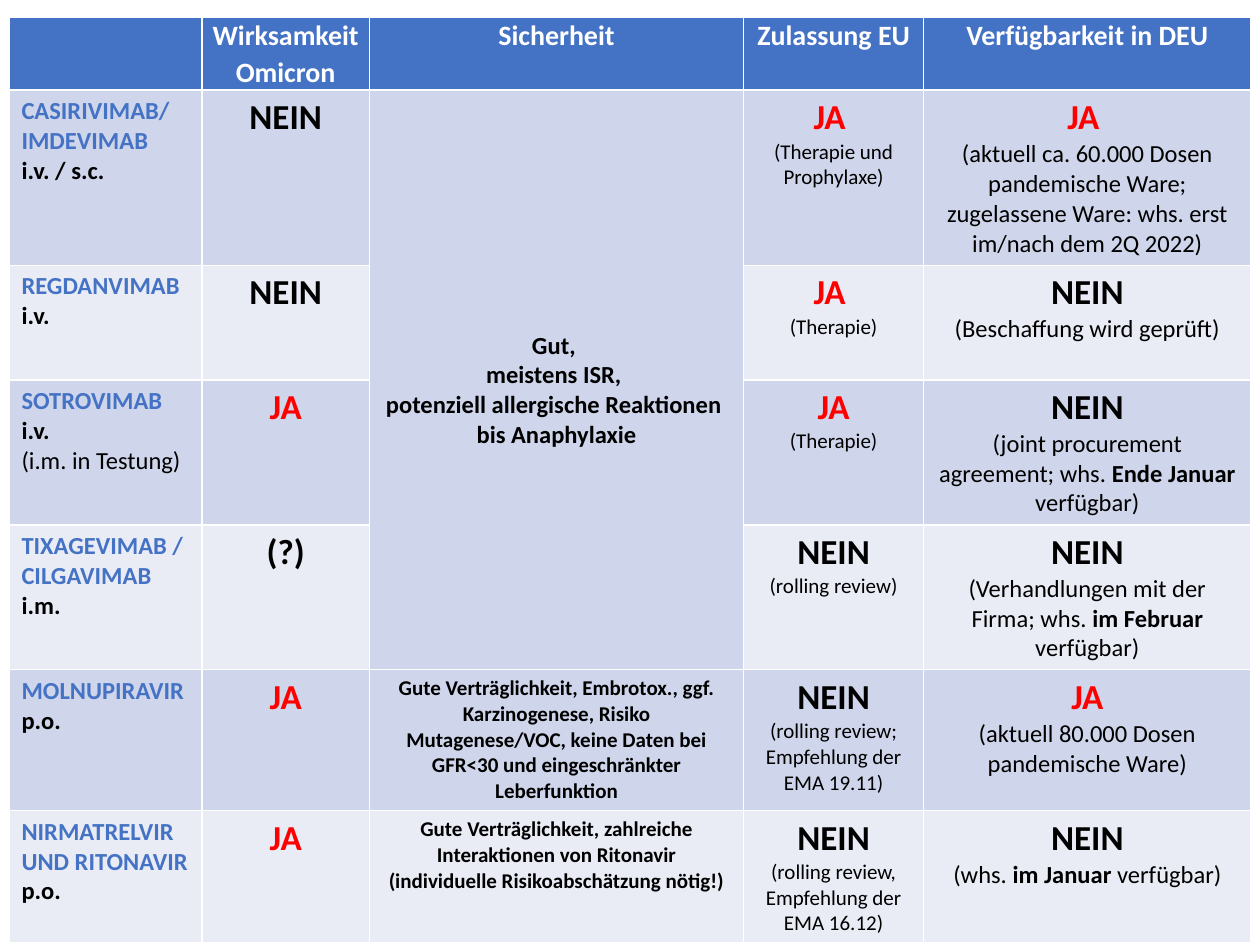
from pptx import Presentation
from pptx.dml.color import RGBColor as RGB
from pptx.enum.text import MSO_ANCHOR as Anchor, PP_ALIGN as Align
from pptx.util import Cm, Pt

BLUE = RGB(0x44, 0x72, 0xC4)
BAND_DARK = RGB(0xCF, 0xD5, 0xEA)
BAND_LIGHT = RGB(0xE9, 0xEB, 0xF5)
WHITE = RGB(0xFF, 0xFF, 0xFF)
BLACK = RGB(0, 0, 0)
RED = RGB(0xFF, 0, 0)

STYLES = {
    "header": (16, True, WHITE),
    "drug": (14, True, BLUE),
    "strong": (14, True, BLACK),
    "detail": (14, False, BLACK),
    "yes": (20, True, RED),
    "no": (20, True, BLACK),
    "note": (12, False, BLACK),
    "safety": (12, True, BLACK),
}

HEADINGS = ["", "Wirksamkeit Omicron", "Sicherheit", "Zulassung EU", "Verfügbarkeit in DEU"]
SHARED_SAFETY = ["Gut, ", "meistens ISR, ", "potenziell allergische Reaktionen ", "bis Anaphylaxie"]
YES = [("yes", "JA")]
NO = [("no", "NEIN")]

DRUGS = [
    ([[("drug", "CASIRIVIMAB/ IMDEVIMAB")], [("strong", "i.v. / s.c.")]],
     [NO],
     [[("strong", line)] for line in SHARED_SAFETY],
     [[("yes", "JA ")], [("note", "(Therapie und Prophylaxe)")]],
     [[("yes", "JA ")], [("detail", "(aktuell ca. 60.000 Dosen pandemische Ware; "
                                    "zugelassene Ware: whs. erst im/nach dem 2Q 2022)")]]),
    ([[("drug", "REGDANVIMAB")], [("strong", "i.v.")]],
     [NO],
     None,
     [[("yes", "JA ")], [("note", "(Therapie)")]],
     [NO, [("detail", "(Beschaffung wird geprüft)")]]),
    ([[("drug", "SOTROVIMAB")], [("strong", "i.v.")], [("detail", "(i.m. in Testung)")]],
     [YES],
     None,
     [YES, [("note", "(Therapie)")]],
     [NO, [("detail", "(joint procurement agreement; whs. "),
           ("strong", "Ende Januar "), ("detail", "verfügbar)")]]),
    ([[("drug", "TIXAGEVIMAB / CILGAVIMAB")], [("strong", "i.m.")]],
     [[("no", "(?)")]],
     None,
     [NO, [("note", "(rolling review)")]],
     [NO, [("detail", "(Verhandlungen mit der Firma; whs. "),
           ("strong", "im Februar "), ("detail", "verfügbar)")]]),
    ([[("drug", "MOLNUPIRAVIR")], [("strong", "p.o.")]],
     [YES],
     [[("safety", "Gute Verträglichkeit, Embrotox., ggf. Karzinogenese, Risiko Mutagenese/VOC, "
                  "keine Daten bei GFR<30 und eingeschränkter Leberfunktion")]],
     [NO, [("note", "(rolling review; Empfehlung der EMA 19.11)")]],
     [YES, [("detail", "(aktuell 80.000 Dosen pandemische Ware)")]]),
    ([[("drug", "NIRMATRELVIR UND RITONAVIR "), ("strong", "p.o.")]],
     [YES],
     [[("safety", "Gute Verträglichkeit, zahlreiche Interaktionen von Ritonavir "
                  "(individuelle Risikoabschätzung nötig!)")]],
     [NO, [("note", "(rolling review, Empfehlung der EMA 16.12)")]],
     [NO, [("detail", "(whs. "), ("strong", "im Januar "), ("detail", "verfügbar)")]]),
]

COLUMN_WIDTHS = [3.89, 3.38, 7.54, 3.63, 6.6]
ROW_HEIGHTS = [1.46, 3.53, 2.31, 2.92, 2.92, 2.84, 2.64]
HEADER_FORMAT = {"margin_left": Cm(0.18), "margin_right": Cm(0.18),
                 "margin_top": 0, "margin_bottom": 0}
SHARED_FORMAT = {"vertical_anchor": Anchor.MIDDLE, "margin_top": Cm(0.55)}


def set_all(target, values):
    for name, value in values.items():
        setattr(target, name, value)


def fill_cell(cell, lines, color, align, line_spacing=None):
    cell.fill.solid()
    cell.fill.fore_color.rgb = color
    frame = cell.text_frame
    for index, pieces in enumerate(lines):
        paragraph = frame.add_paragraph() if index else frame.paragraphs[0]
        set_all(paragraph, {"alignment": align, "line_spacing": line_spacing})
        for style, words in pieces:
            size, bold, ink = STYLES[style]
            run = paragraph.add_run()
            run.text = words
            set_all(run.font, {"name": "Calibri", "size": Pt(size), "bold": bold})
            run.font.color.rgb = ink


deck = Presentation()
set_all(deck, {"slide_width": Cm(25.4), "slide_height": Cm(19.05)})
slide = deck.slides.add_slide(deck.slide_layouts[6])
overview = slide.shapes.add_table(
    len(ROW_HEIGHTS), len(COLUMN_WIDTHS), Cm(0.18), Cm(0.34),
    Cm(sum(COLUMN_WIDTHS)), Cm(sum(ROW_HEIGHTS))).table

for column, width in zip(overview.columns, COLUMN_WIDTHS):
    column.width = Cm(width)
for row, height in zip(overview.rows, ROW_HEIGHTS):
    row.height = Cm(height)

for col, heading in enumerate(HEADINGS):
    header_cell = overview.cell(0, col)
    set_all(header_cell, HEADER_FORMAT)
    fill_cell(header_cell, [[("header", heading)]] if heading else [], BLUE, Align.CENTER, 1.07)

for row, drug in enumerate(DRUGS, 1):
    band = BAND_DARK if row % 2 else BAND_LIGHT
    for col, lines in enumerate(drug):
        fill_cell(overview.cell(row, col), lines or [], band, Align.CENTER if col else Align.LEFT)

shared_safety = overview.cell(1, 2)
shared_safety.merge(overview.cell(4, 2))
set_all(shared_safety, SHARED_FORMAT)

deck.save("out.pptx")
